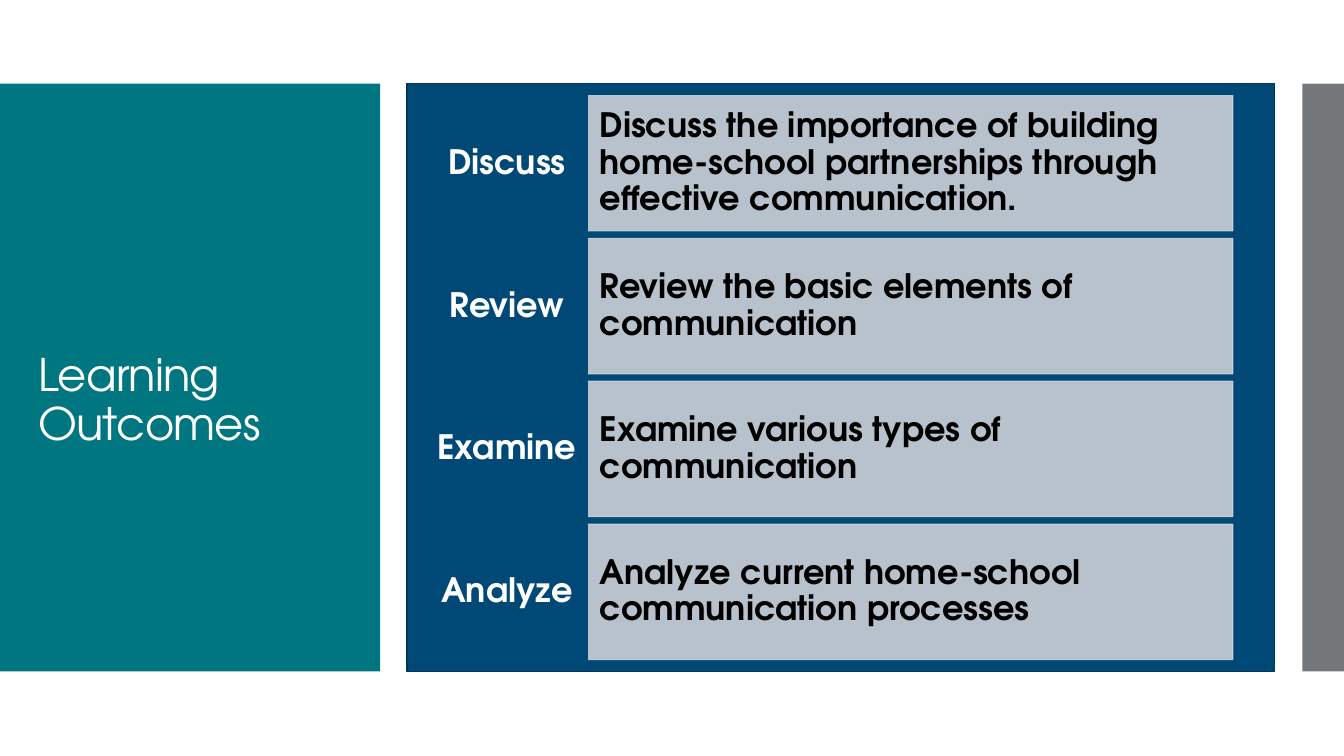
from lxml import etree
from pptx import Presentation
from pptx import util as u
from pptx.dml.color import RGBColor
from pptx.enum import shapes, text
from pptx.oxml.ns import qn

FONT = "TeX Gyre Adventor"
WHITE = RGBColor(0xFF, 0xFF, 0xFF)
BLACK = RGBColor(0, 0, 0)
NAVY = RGBColor(0x00, 0x49, 0x76)
NAVY_EDGE = RGBColor(0x00, 0x36, 0x57)
TEAL = RGBColor(0x00, 0x76, 0x81)
GREY = RGBColor(0x75, 0x78, 0x7B)
PALE = RGBColor(0xCC, 0xD0, 0xD6)

presentation = Presentation()
presentation.slide_width = u.Cm(33.87)
presentation.slide_height = u.Cm(19.05)
slide = presentation.slides.add_slide(presentation.slide_layouts[6])


def add_block(left, top, width, height, fill, edge=None):
    shape = slide.shapes.add_shape(
        shapes.MSO_SHAPE.RECTANGLE, u.Cm(left), u.Cm(top), u.Cm(width), u.Cm(height))
    shape.shadow.inherit = False
    shape.fill.solid()
    shape.fill.fore_color.rgb = fill
    if edge is None:
        shape.line.fill.background()
    else:
        shape.line.color.rgb = edge
        shape.line.width = u.Pt(0.85)
    return shape


def write(shape, wording, size, color, bold, align, anchor, inset):
    frame = shape.text_frame
    frame.text = wording
    frame.word_wrap = True
    frame.vertical_anchor = anchor
    frame.margin_left = frame.margin_right = u.Cm(inset)
    paragraph = frame.paragraphs[0]
    paragraph.alignment = align
    paragraph.line_spacing = 0.9
    font = paragraph.runs[0].font
    font.name, font.size, font.bold = FONT, u.Pt(size), bold
    font.color.rgb = color
    return paragraph.runs[0]


# Background bands
BAND_TOP, BAND_HEIGHT = 2.11, 14.81
add_block(10.26, BAND_TOP, 21.87, BAND_HEIGHT, NAVY, NAVY_EDGE)
add_block(0, BAND_TOP, 9.58, BAND_HEIGHT, TEAL)
add_block(32.82, BAND_TOP, 1.05, BAND_HEIGHT, GREY)

# Title
title = slide.shapes.add_textbox(u.Cm(0.71), u.Cm(3.18), u.Cm(7.87), u.Cm(8.28))
title_run = write(title, "Learning Outcomes", 32, WHITE, False,
                  text.PP_ALIGN.LEFT, text.MSO_ANCHOR.BOTTOM, 0.25)
title_run.font._element.set("spc", "-60")

# Outcome rows: a verb on the left, its description on the right
OUTCOMES = [
    ("Discuss", "Discuss the importance of building home-school partnerships "
                "through effective communication."),
    ("Review", "Review the basic elements of communication"),
    ("Examine", "Examine various types of communication"),
    ("Analyze", "Analyze current home-school communication processes"),
]
ROW_TOP, ROW_STEP, ROW_HEIGHT = 2.41, 3.6, 3.41
VERB_LEFT, VERB_WIDTH, DESCRIPTION_WIDTH = 10.74, 4.07, 16.26

for row, (verb, description) in enumerate(OUTCOMES):
    top = ROW_TOP + row * ROW_STEP
    description_box = add_block(VERB_LEFT + VERB_WIDTH, top, DESCRIPTION_WIDTH,
                                ROW_HEIGHT, PALE, PALE)
    # Let the navy panel show through slightly
    for color in description_box._element.spPr.iter(qn("a:srgbClr")):
        etree.SubElement(color, qn("a:alpha")).set("val", "90000")
    write(description_box, description, 24, BLACK, True,
          text.PP_ALIGN.LEFT, text.MSO_ANCHOR.MIDDLE, 0.3)

    verb_box = add_block(VERB_LEFT, top, VERB_WIDTH, ROW_HEIGHT, NAVY, NAVY)
    write(verb_box, verb, 24, WHITE, True,
          text.PP_ALIGN.CENTER, text.MSO_ANCHOR.MIDDLE, 0.2)

presentation.save("out.pptx")
